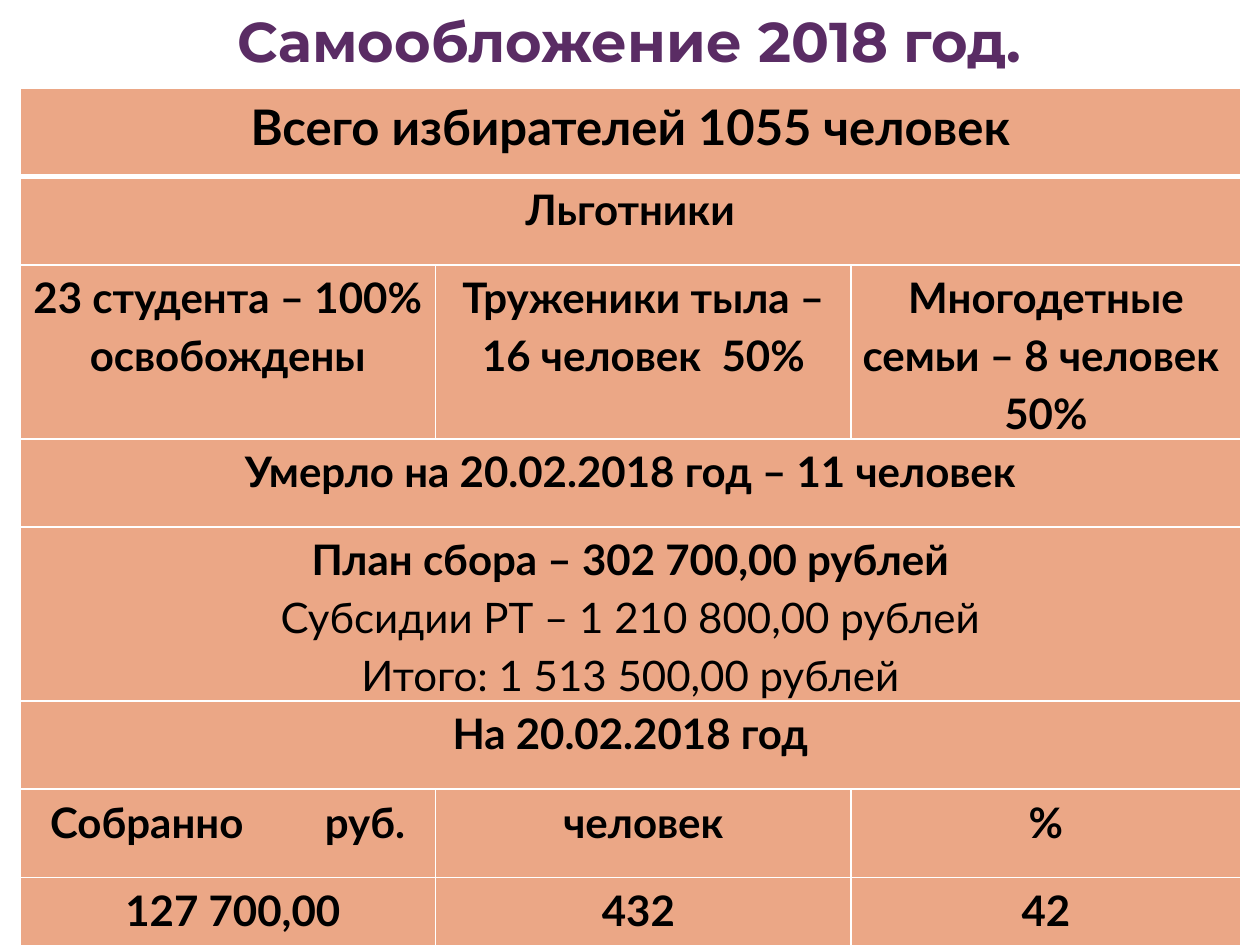
from lxml.etree import SubElement
from pptx import Presentation
from pptx.dml.color import RGBColor
from pptx.enum.text import MSO_ANCHOR as Anchor, PP_ALIGN as Align
from pptx.oxml.ns import qn
from pptx.util import Cm, Pt

BLACK = RGBColor(0x00, 0x00, 0x00)
WHITE = RGBColor(0xFF, 0xFF, 0xFF)
PEACH = RGBColor(0xEB, 0xA7, 0x86)
PURPLE = RGBColor(0x5A, 0x2C, 0x64)

COLUMN_WIDTHS = [8.38, 8.38, 7.85]
ROW_HEIGHTS = [1.78, 1.78, 2.57, 1.78, 3.3, 1.78, 1.78, 1.78]
CELL_MARGIN = 0.18
UNIT_MARGIN = 0.61
UNIT_TAB = 5.54

ROWS = [
    ["Всего избирателей 1055 человек"],
    ["Льготники"],
    ["23 студента – 100% освобождены", "Труженики тыла – 16 человек  50%",
     "Многодетные семьи – 8 человек  50%"],
    ["Умерло на 20.02.2018 год – 11 человек"],
    ["План сбора – 302 700,00 рублей\nСубсидии РТ – 1 210 800,00 рублей\n"
     "Итого: 1 513 500,00 рублей"],
    ["На 20.02.2018 год"],
    ["Собранно\tруб.", "человек", "%"],
    [" 127 700,00", "432 ", "42"],
]


def write_text(frame, text, *, font, size, color, align=Align.CENTER,
               line_spacing=None, bold_lines=1, tab=None):
    frame.word_wrap = True
    for index, line in enumerate(text.split("\n")):
        para = frame.add_paragraph() if index else frame.paragraphs[0]
        para.alignment = align
        para.line_spacing = line_spacing
        if tab:
            stops = SubElement(para._p.get_or_add_pPr(), qn("a:tabLst"))
            SubElement(stops, qn("a:tab"), pos=str(Cm(tab)), algn="l")
        span = para.add_run()
        span.text = line
        span.font.name = font
        span.font.size = Pt(size)
        span.font.bold = index < bold_lines
        span.font.color.rgb = color


class SlideBuilder:
    title_font = "Montserrat"
    table_font = "Lato"

    def __init__(self, deck):
        self.page = deck.slides.add_slide(deck.slide_layouts[6])

    def title(self, text, left, top, width, height):
        box = self.page.shapes.add_textbox(Cm(left), Cm(top), Cm(width), Cm(height))
        box.text_frame.vertical_anchor = Anchor.TOP
        write_text(box.text_frame, text, font=self.title_font, size=32, color=PURPLE)

    def border(self, cell, side, width):
        line = SubElement(cell._tc.get_or_add_tcPr(), qn(f"a:ln{side}"), w=str(Pt(width)))
        fill = SubElement(line, qn("a:solidFill"))
        SubElement(fill, qn("a:srgbClr"), val=str(WHITE))

    def style_cell(self, cell, row):
        for side in "LRTB":
            below_header = (row, side) in [(0, "B"), (1, "T")]
            self.border(cell, side, 3 if below_header else 1)
        cell.fill.solid()
        cell.fill.fore_color.rgb = PEACH
        cell.margin_left = cell.margin_right = Cm(CELL_MARGIN)
        cell.margin_top = cell.margin_bottom = 0

    def fill_cell(self, cell, text, size):
        tabbed = "\t" in text
        if tabbed:
            cell.margin_left = Cm(UNIT_MARGIN)
        write_text(cell.text_frame, text, font=self.table_font, size=size,
                   color=BLACK, line_spacing=1.15,
                   align=Align.LEFT if tabbed else Align.CENTER,
                   tab=UNIT_TAB if tabbed else None)

    def table(self, rows, left, top, widths, heights):
        table = self.page.shapes.add_table(
            len(rows), len(widths), Cm(left), Cm(top),
            Cm(sum(widths)), Cm(sum(heights))).table
        table.horz_banding = False
        for column, width in zip(table.columns, widths):
            column.width = Cm(width)
        for number, (texts, height) in enumerate(zip(rows, heights)):
            table.rows[number].height = Cm(height)
            for cell in table.rows[number].cells:
                self.style_cell(cell, number)
            if len(texts) == 1:
                table.cell(number, 0).merge(table.cell(number, len(widths) - 1))
            for column, text in enumerate(texts):
                self.fill_cell(table.cell(number, column), text, 24 if number else 28)


def main():
    deck = Presentation()
    deck.slide_width, deck.slide_height = Cm(25.4), Cm(19.05)
    builder = SlideBuilder(deck)
    builder.table(ROWS, 0.4, 1.78, COLUMN_WIDTHS, ROW_HEIGHTS)
    builder.title("Самообложение 2018 год.", 0.79, 0, 23.82, 3.33)
    deck.save("out.pptx")


if __name__ == "__main__":
    main()
